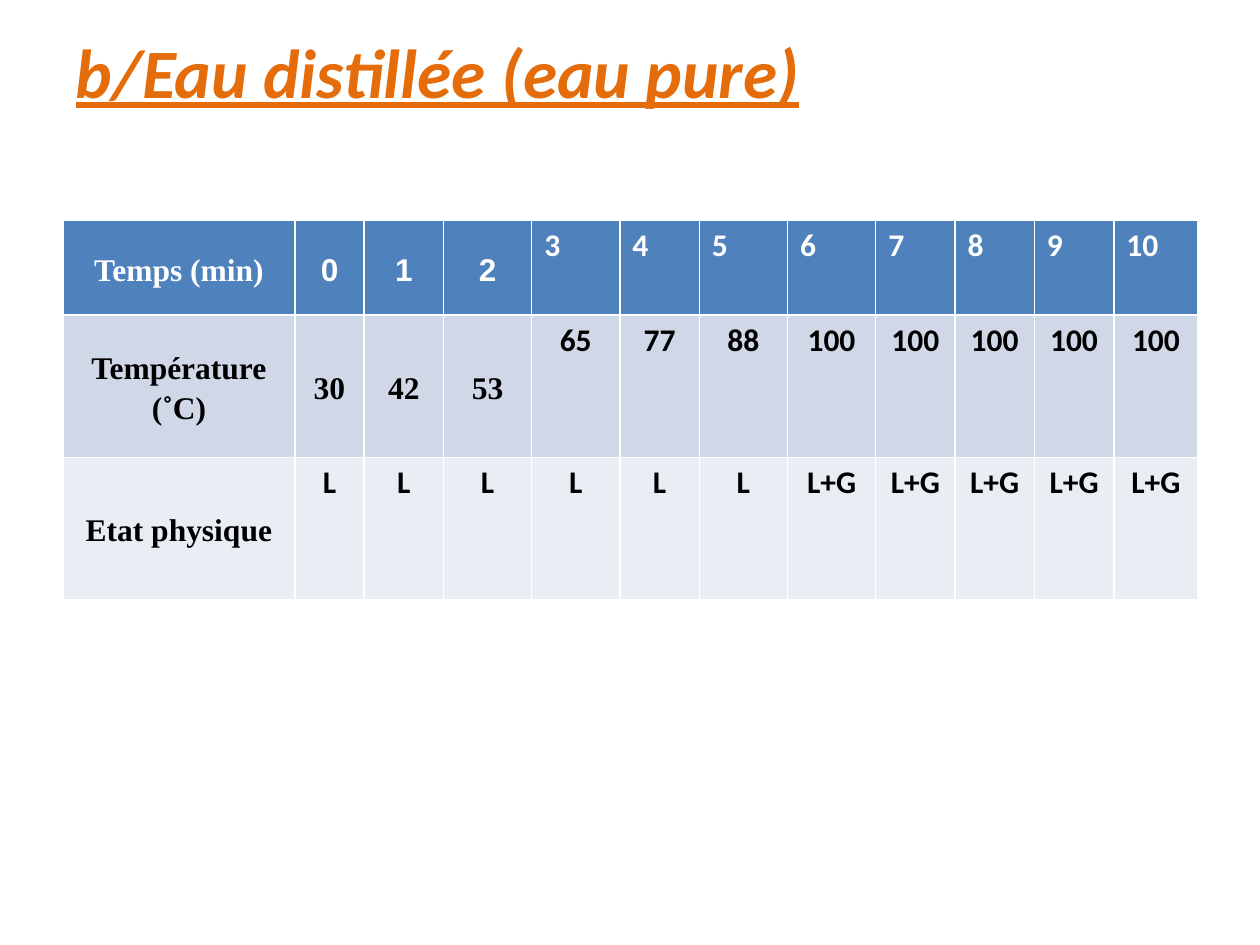
import pptx
import pptx.dml.color
import pptx.enum.text
import pptx.oxml
import pptx.oxml.ns
import pptx.util

Inches = pptx.util.Inches
RGBColor = pptx.dml.color.RGBColor
Align = pptx.enum.text.PP_ALIGN
Anchor = pptx.enum.text.MSO_ANCHOR

ORANGE = RGBColor(0xE4, 0x6C, 0x0A)
WHITE = RGBColor(0xFF, 0xFF, 0xFF)
BLACK = RGBColor(0x00, 0x00, 0x00)
HEADER_BLUE = RGBColor(0x4F, 0x81, 0xBD)
BAND_DARK = RGBColor(0xD0, 0xD8, 0xE8)
BAND_LIGHT = RGBColor(0xE9, 0xED, 0xF4)

COLUMN_WIDTHS = [1.84, 0.55, 0.63, 0.7, 0.7, 0.63, 0.7, 0.7, 0.63, 0.63, 0.63, 0.67]
ROW_HEIGHTS = [0.75, 1.13, 1.13]
ROW_FILLS = [HEADER_BLUE, BAND_DARK, BAND_LIGHT]
CENTRED_COLUMNS = [4, 4, 1]
ROWS = [
    ["Temps (min)"] + [str(minute) for minute in range(11)],
    ["Température (˚C)", "30", "42", "53", "65", "77", "88"] + ["100"] * 5,
    ["Etat physique"] + ["L"] * 6 + ["L+G"] * 5,
]


def write_text(frame, text, *, size=18, font="Calibri", color=BLACK, align=Align.LEFT,
               italic=False, underline=False, spacing=None, right_to_left=False):
    frame.text = text
    paragraph = frame.paragraphs[0]
    paragraph.alignment = align
    paragraph.line_spacing = spacing
    if right_to_left:
        paragraph._p.get_or_add_pPr().set("rtl", "1")
    for run in paragraph.runs:
        run.font.size = pptx.util.Pt(size)
        run.font.name = font
        run.font.bold = True
        run.font.italic = italic
        run.font.underline = underline
        run.font.color.rgb = color
        if right_to_left:
            complex_font = pptx.oxml.parse_xml(
                f'<a:cs {pptx.oxml.ns.nsdecls("a")} typeface="Arial"/>')
            run._r.get_or_add_rPr().append(complex_font)


def add_title(slide):
    title = slide.shapes.title
    title.left, title.top = Inches(0.5), Inches(0.3)
    title.width, title.height = Inches(9), Inches(1.25)
    frame = title.text_frame
    frame.auto_size = pptx.enum.text.MSO_AUTO_SIZE.NONE
    frame.vertical_anchor = Anchor.MIDDLE
    write_text(frame, "b/Eau distillée (eau pure)\v", size=39.6, color=ORANGE,
               italic=True, underline=True)


def fill_cell(cell, text, row, column):
    cell.fill.solid()
    cell.fill.fore_color.rgb = ROW_FILLS[row]
    is_header = row == 0
    color = WHITE if is_header else BLACK
    if column < CENTRED_COLUMNS[row]:
        cell.vertical_anchor = Anchor.MIDDLE
        cell.margin_left = cell.margin_right = Inches(0.07)
        cell.margin_top = cell.margin_bottom = 0
        write_text(cell.text_frame, text, font="Times New Roman", color=color,
                   align=Align.CENTER, spacing=1.15,
                   right_to_left=is_header or column == 0)
    else:
        write_text(cell.text_frame, text, color=color,
                   align=Align.LEFT if is_header else Align.CENTER)


def add_measurement_table(slide):
    table = slide.shapes.add_table(
        len(ROWS), len(COLUMN_WIDTHS), Inches(0.5), Inches(1.75),
        Inches(sum(COLUMN_WIDTHS)), Inches(sum(ROW_HEIGHTS))).table
    for column, width in zip(table.columns, COLUMN_WIDTHS):
        column.width = Inches(width)
    for row, height in zip(table.rows, ROW_HEIGHTS):
        row.height = Inches(height)
    for row, texts in enumerate(ROWS):
        for column, text in enumerate(texts):
            fill_cell(table.cell(row, column), text, row, column)


def main():
    presentation = pptx.Presentation()
    presentation.slide_width = Inches(10)
    presentation.slide_height = Inches(7.5)
    slide = presentation.slides.add_slide(presentation.slide_layouts[5])
    add_title(slide)
    add_measurement_table(slide)
    presentation.save("out.pptx")


if __name__ == "__main__":
    main()
